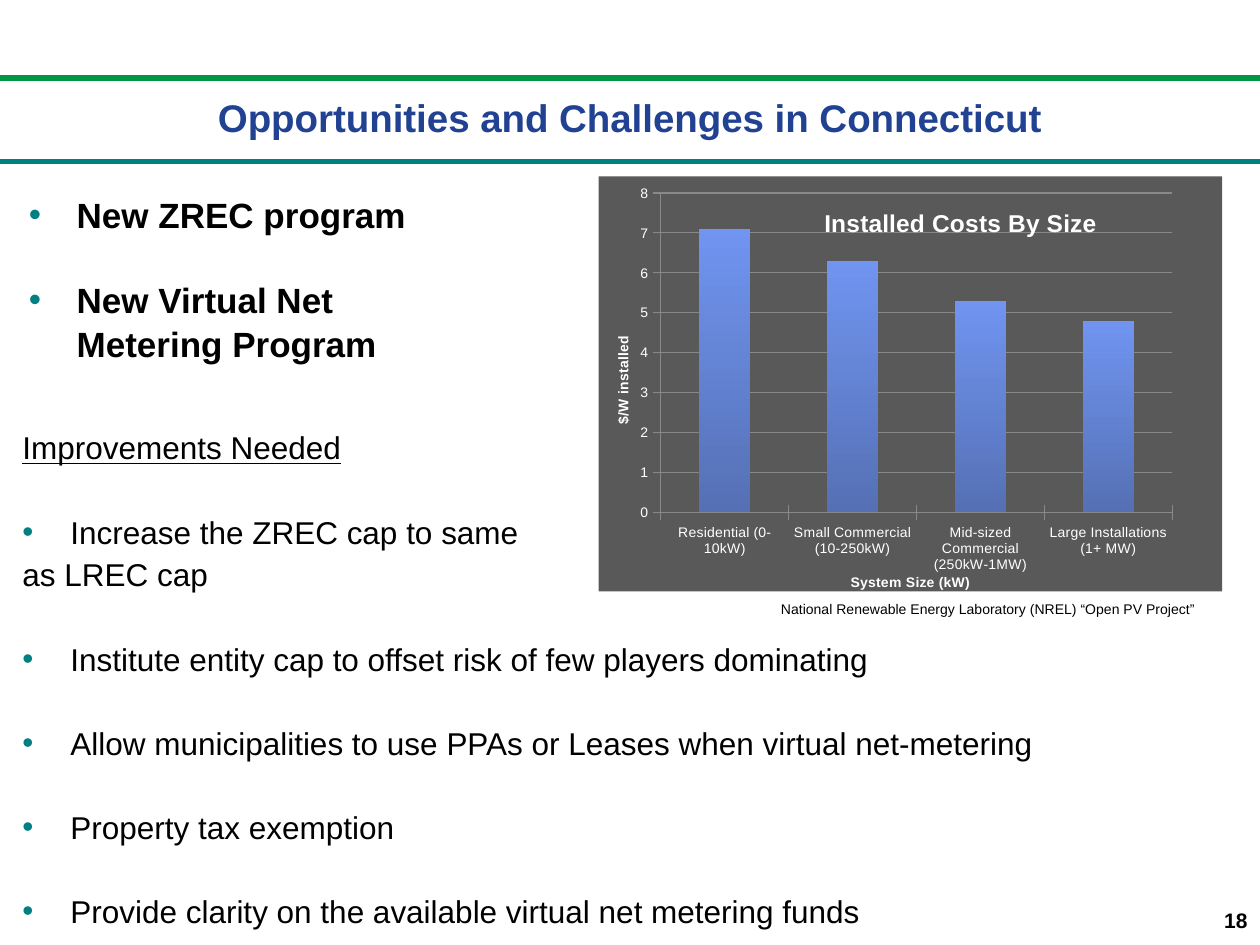
"""Build the slide on opportunities and challenges in Connecticut."""
from lxml.etree import SubElement
from pptx import Presentation
from pptx.chart.data import CategoryChartData
from pptx.dml.color import RGBColor
from pptx.enum.chart import XL_CHART_TYPE, XL_TICK_MARK
from pptx.enum.shapes import MSO_CONNECTOR
from pptx.enum.text import MSO_ANCHOR, PP_ALIGN
from pptx.oxml import parse_xml
from pptx.oxml.ns import nsdecls, qn
from pptx.util import Inches, Pt

COLORS = {
    "green": "009644", "teal": "008080", "navy": "214192", "black": "000000",
    "white": "FFFFFF", "panel": "595959", "grid": "898989",
    "bar_top": "7094F0", "bar_bottom": "5570B4",
}


def color(name):
    return RGBColor.from_string(COLORS[name])


def write(frame, text, size=18, bold=False, underline=False, ink="black", align=PP_ALIGN.LEFT,
          bullet=False, hang=0, before=0, after=0, spacing=None):
    para = frame.paragraphs[0] if not frame.text else frame.add_paragraph()
    properties = para._p.get_or_add_pPr()
    if bullet:
        properties.set("marL", str(Inches(hang)))
        properties.set("indent", str(-Inches(hang)))
        tint = SubElement(properties, qn("a:buClr"))
        SubElement(tint, qn("a:srgbClr"), val=COLORS["teal"])
        SubElement(properties, qn("a:buFont"), typeface="Arial")
        SubElement(properties, qn("a:buChar"), char="•")
    para.alignment = align
    para.space_before, para.space_after = Pt(before), Pt(after)
    if spacing:
        para.line_spacing = spacing
    span = para.add_run()
    span.text = text
    span.font.name, span.font.size = "Arial", Pt(size)
    span.font.bold, span.font.underline = bold, underline
    span.font.color.rgb = color(ink)


deck = Presentation()
deck.slide_width, deck.slide_height = Inches(10), Inches(7.5)
page = deck.slides.add_slide(deck.slide_layouts[5])

for top, ink in ((0.62, "green"), (1.28, "teal")):
    rule = page.shapes.add_connector(
        MSO_CONNECTOR.STRAIGHT, Inches(0), Inches(top), Inches(10), Inches(top))
    rule.line.color.rgb, rule.line.width = color(ink), Pt(3)
    SubElement(rule._element.spPr, qn("a:effectLst"))

title = page.shapes.title
title.left, title.top, title.width, title.height = Inches(0), Inches(0.68), Inches(10), Inches(0.5)
title.text_frame.vertical_anchor = MSO_ANCHOR.MIDDLE
write(title.text_frame, "Opportunities and Challenges in Connecticut",
      size=22, bold=True, ink="navy", align=PP_ALIGN.CENTER)

frames = {}
for name, left, top, width, height in (
    ("programs", 0.13, 1.47, 3.85, 1.5),
    ("improvements", 0.08, 3.34, 9.92, 4.1),
    ("number", 7.67, 7.15, 2.33, 0.35),
    ("credit", 6.1, 4.72, 3.56, 0.24),
):
    box = page.shapes.add_textbox(Inches(left), Inches(top), Inches(width), Inches(height))
    frames[name] = box.text_frame
    frames[name].word_wrap = name != "credit"

for text, before in (("New ZREC program", 0), ("New Virtual Net Metering Program", 24)):
    write(frames["programs"], text, size=20, bold=True, bullet=True, hang=0.38,
          before=before, spacing=1.04)

for text, before, bullet in (
    ("Improvements Needed", 0, False),
    ("Increase the ZREC cap to same", 23.6, True),
    ("as LREC cap", 0, False),
    ("Institute entity cap to offset risk of few players dominating", 23.6, True),
    ("Allow municipalities to use PPAs or Leases when virtual net-metering", 23.6, True),
    ("Property tax exemption", 23.6, True),
    ("Provide clarity on the available virtual net metering funds", 23.6, True),
):
    write(frames["improvements"], text, underline=text == "Improvements Needed", bullet=bullet,
          hang=0.38, before=before, after=2, spacing=1.04)

write(frames["number"], "18", size=12, bold=True, align=PP_ALIGN.RIGHT)
write(frames["credit"], "National Renewable Energy Laboratory (NREL) “Open PV Project”", size=8)

data = CategoryChartData()
data.categories = ["Residential (0-10kW)", "Small Commercial (10-250kW)",
                   "Mid-sized Commercial (250kW-1MW)", "Large Installations (1+ MW)"]
data.add_series("Series 1", [7.1, 6.3, 5.3, 4.8])
chart = page.shapes.add_chart(XL_CHART_TYPE.COLUMN_CLUSTERED, Inches(4.75), Inches(1.4),
                              Inches(4.95), Inches(3.32), data).chart
chart.has_legend = False
chart.font.name, chart.font.size = "Arial", Pt(8)
chart.font.color.rgb = color("white")

plot = chart.plots[0]
plot.vary_by_categories, plot.gap_width = False, 150
bars = plot.series[0].format.fill
bars.gradient()
bars.gradient_angle = 270
for stop, ink in zip(bars.gradient_stops, ("bar_top", "bar_bottom")):
    stop.color.rgb = color(ink)

value_axis, category_axis = chart.value_axis, chart.category_axis
value_axis.minimum_scale, value_axis.maximum_scale, value_axis.major_unit = 0, 8, 1
value_axis.major_gridlines.format.line.color.rgb = color("grid")
for axis in (value_axis, category_axis):
    axis.major_tick_mark = XL_TICK_MARK.CROSS
    axis.format.line.color.rgb = color("grid")
    axis.tick_labels.font.size = Pt(8)

for owner, text, size, x, y in (
    (chart, "Installed Costs By Size", 14, 0.355, 0.065),
    (category_axis, "System Size (kW)", 8, 0.4, 0.95),
    (value_axis, "$/W installed", 8, 0.02, 0.38),
):
    heading = owner.chart_title if owner is chart else owner.axis_title
    write(heading.text_frame, text, size=size, bold=True, ink="white", align=PP_ALIGN.CENTER)
    for layout in heading._element.findall(qn("c:layout")):
        heading._element.remove(layout)
    heading._element.find(qn("c:tx")).addnext(parse_xml(
        f'<c:layout {nsdecls("c")}><c:manualLayout><c:xMode val="edge"/><c:yMode val="edge"/>'
        f'<c:x val="{x}"/><c:y val="{y}"/></c:manualLayout></c:layout>'))
chart.chart_title.include_in_layout = True

area = chart._chartSpace.chart.plotArea
for layout in area.findall(qn("c:layout")):
    area.remove(layout)
area.insert(0, parse_xml(
    f'<c:layout {nsdecls("c")}><c:manualLayout><c:layoutTarget val="inner"/>'
    '<c:xMode val="edge"/><c:yMode val="edge"/><c:x val="0.1"/><c:y val="0.04"/>'
    '<c:w val="0.82"/><c:h val="0.77"/></c:manualLayout></c:layout>'))
chart._chartSpace.chart.addnext(parse_xml(
    f'<c:spPr {nsdecls("c", "a")}><a:solidFill><a:srgbClr val="{COLORS["panel"]}"/></a:solidFill>'
    '<a:ln><a:noFill/></a:ln></c:spPr>'))

deck.save("out.pptx")
